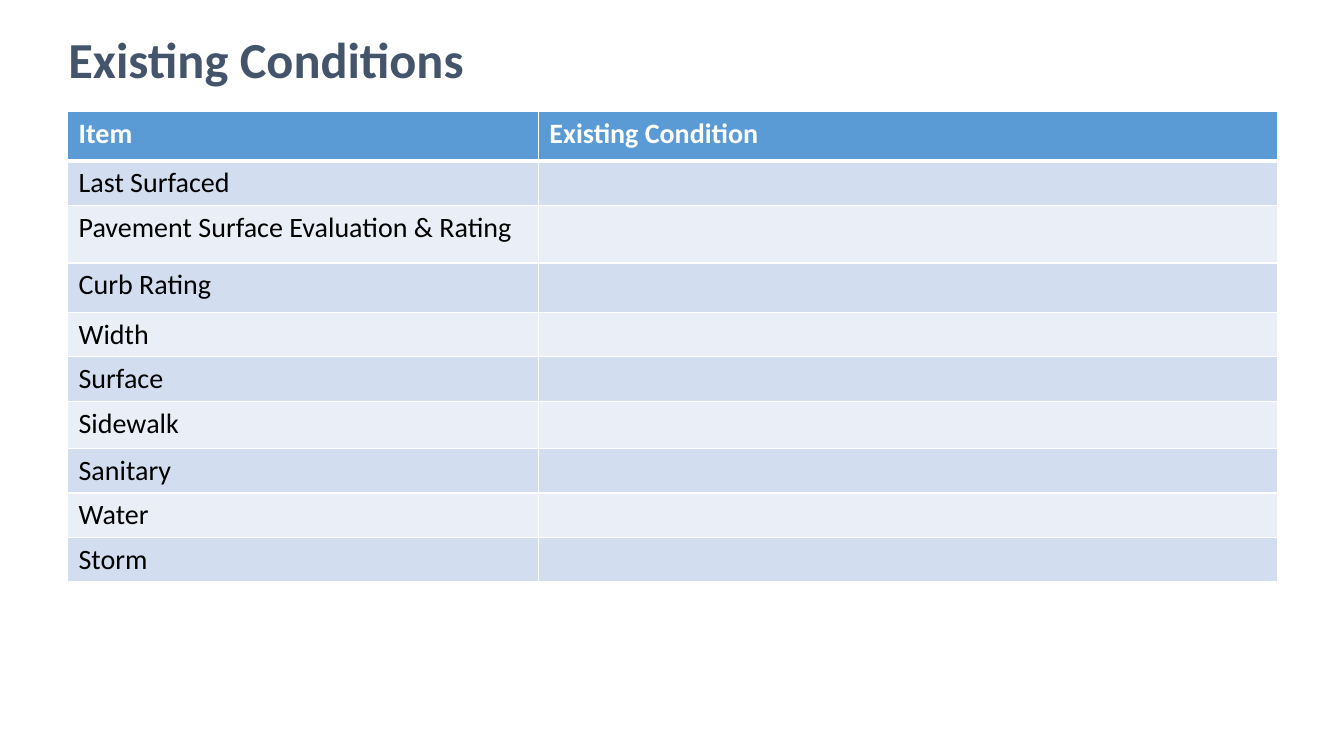
import pptx
import pptx.util
import pptx.dml.color
import pptx.enum.text
import pptx.oxml
import pptx.oxml.ns

RGB = pptx.dml.color.RGBColor
WHITE = RGB(0xFF, 0xFF, 0xFF)
BLACK = RGB(0, 0, 0)
SLATE = RGB(0x44, 0x54, 0x6A)
BLUE = RGB(0x5B, 0x9B, 0xD5)
BANDS = (RGB(0xEA, 0xEF, 0xF7), RGB(0xD2, 0xDE, 0xEF))

SCALE = 9144
COLS = (467, 733)
ROWS = (
    ("Item", 49), ("Last Surfaced", 44),
    ("Pavement Surface Evaluation & Rating", 57), ("Curb Rating", 49),
    ("Width", 44), ("Surface", 44), ("Sidewalk", 47),
    ("Sanitary", 44), ("Water", 44), ("Storm", 44),
)
INSETS = {"margin_left": 11, "margin_right": 11,
          "margin_top": 5, "margin_bottom": 5}


def px(size):
    """Turn px into EMU."""
    return pptx.util.Emu(size * SCALE)


def write(frame, text, size, color, bold):
    """Put one styled line of text in a frame."""
    line = frame.paragraphs[0]
    line.text = text
    style = {"name": "Calibri", "size": pptx.util.Pt(size), "bold": bold}
    for key, value in style.items():
        setattr(line.font, key, value)
    line.font.color.rgb = color


def border(cell, head):
    """Draw white lines on the four sides of a cell."""
    for side in "LRTB":
        width = pptx.util.Pt(3 if head and side == "B" else 1)
        cell._tc.get_or_add_tcPr().append(pptx.oxml.parse_xml(
            f'<a:ln{side} {pptx.oxml.ns.nsdecls("a")} w="{width}">'
            f'<a:solidFill><a:srgbClr val="{WHITE}"/></a:solidFill>'
            f'</a:ln{side}>'))


def paint(cell, text, row):
    """Style one table cell by its row."""
    head = row == 0
    border(cell, head)
    cell.fill.solid()
    cell.fill.fore_color.rgb = BLUE if head else BANDS[row % 2]
    for key, value in INSETS.items():
        setattr(cell, key, px(value))
    write(cell.text_frame, text, 20, WHITE if head else BLACK, head)


def grid(slide):
    """Add the table of conditions."""
    high = sum(size for _, size in ROWS)
    table = slide.shapes.add_table(
        len(ROWS), len(COLS), px(67), px(111), px(sum(COLS)), px(high)).table
    for col, wide in zip(table.columns, COLS):
        col.width = px(wide)
    for row, (item, size) in enumerate(ROWS):
        table.rows[row].height = px(size)
        state = "Existing Condition" if row == 0 else ""
        for col, text in enumerate((item, state)):
            paint(table.cell(row, col), text, row)


def title(slide, text):
    """Add the slide heading."""
    frame = slide.shapes.add_textbox(px(58), px(8), px(908), px(100)).text_frame
    frame.word_wrap = True
    frame.vertical_anchor = pptx.enum.text.MSO_ANCHOR.MIDDLE
    write(frame, text, 36, SLATE, True)


def main():
    """Build and save the slide."""
    deck = pptx.Presentation()
    deck.slide_width, deck.slide_height = px(1333), px(750)
    slide = deck.slides.add_slide(deck.slide_layouts[6])
    grid(slide)
    title(slide, "Existing Conditions")
    deck.save("out.pptx")


if __name__ == "__main__":
    main()
